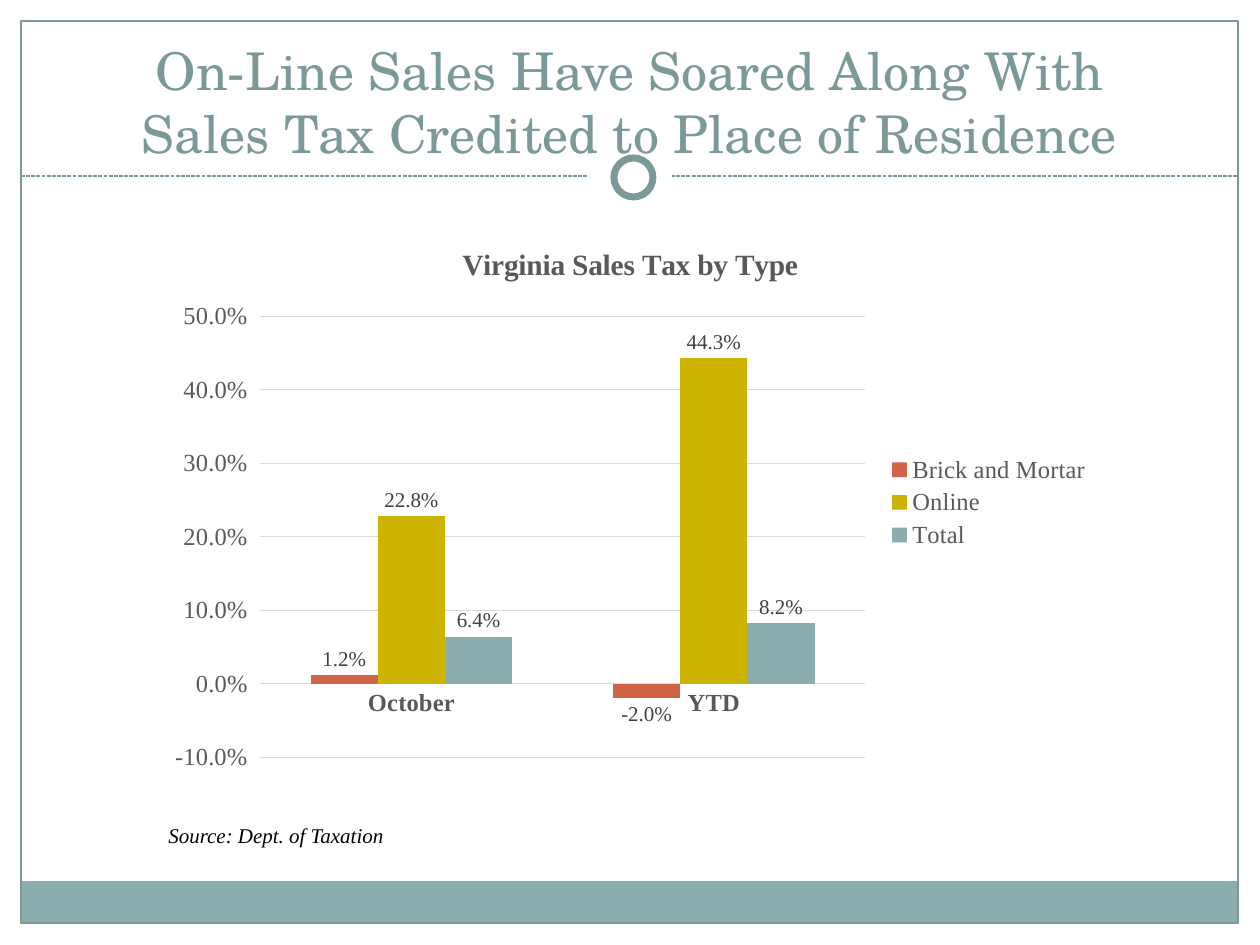
import pptx
import pptx.chart.data
import pptx.dml.color
import pptx.enum.chart
import pptx.enum.dml
import pptx.enum.shapes
import pptx.enum.text
import pptx.oxml
import pptx.oxml.ns
import pptx.util
from dataclasses import dataclass

PX = 914400 / 126


@dataclass(frozen=True)
class Theme:
    heading_font: str = "TeX Gyre Schola"
    body_font: str = "Times New Roman"
    white: str = "FFFFFF"
    black: str = "000000"
    frame: str = "7C999A"
    teal: str = "8CADAE"
    red: str = "D16349"
    gold: str = "CCB400"
    grid: str = "D9D9D9"
    chart_text: str = "595959"
    label_text: str = "404040"
    title_size: float = 29.7
    chart_title_size: float = 16.8
    chart_size: float = 14
    small_size: float = 12
    thin: float = 0.75


theme = Theme()


def box(*lengths):
    """Turn px lengths into EMU."""
    return [pptx.util.Emu(round(length * PX)) for length in lengths]


def style_font(font, name, size, color, bold=False, italic=False):
    font.name = name
    font.size = pptx.util.Pt(size)
    font.color.rgb = pptx.dml.color.RGBColor.from_string(color)
    font.bold = bold
    font.italic = italic


presentation = pptx.Presentation()
presentation.slide_width, presentation.slide_height = box(1260, 945)
slide = presentation.slides.add_slide(presentation.slide_layouts[5])

# Frame, footer band, dashed rule and ring
rectangle = pptx.enum.shapes.MSO_SHAPE.RECTANGLE
oval = pptx.enum.shapes.MSO_SHAPE.OVAL
rule = slide.shapes.add_connector(
    pptx.enum.shapes.MSO_CONNECTOR.STRAIGHT, *box(21, 176, 1239, 176))
rule.line.color.rgb = pptx.dml.color.RGBColor.from_string(theme.frame)
rule.line.width = pptx.util.Pt(theme.thin)
rule.line.dash_style = pptx.enum.dml.MSO_LINE.SQUARE_DOT
effects = pptx.oxml.ns.qn("a:effectLst")
rule.element.spPr.append(rule.element.makeelement(effects, {}))

for kind, bounds, fill, line_width in (
    (rectangle, (21, 881, 1217, 43), theme.teal, None),
    (rectangle, (21, 21, 1217, 902), None, theme.thin),
    (oval, (588, 132, 84, 84), theme.white, None),
    (oval, (614, 158, 39, 39), theme.white, 4),
):
    shape = slide.shapes.add_shape(kind, *box(*bounds))
    shape.shadow.inherit = False
    if fill:
        shape.fill.solid()
        shape.fill.fore_color.rgb = pptx.dml.color.RGBColor.from_string(fill)
    else:
        shape.fill.background()
    if line_width:
        shape.line.color.rgb = pptx.dml.color.RGBColor.from_string(theme.frame)
        shape.line.width = pptx.util.Pt(line_width)
    else:
        shape.line.fill.background()

# Title, brought in front of the ring
title = slide.shapes.title
title.left, title.top, title.width, title.height = box(42, 65, 1176, 105)
title.text_frame.text = (
    "On-Line Sales Have Soared Along With\vSales Tax Credited to Place of Residence")
title.text_frame.word_wrap = True
title.text_frame.auto_size = pptx.enum.text.MSO_AUTO_SIZE.NONE
title.text_frame.vertical_anchor = pptx.enum.text.MSO_ANCHOR.BOTTOM
paragraph = title.text_frame.paragraphs[0]
paragraph.alignment = pptx.enum.text.PP_ALIGN.CENTER
style_font(paragraph.font, theme.heading_font, theme.title_size, theme.frame)
title.element.getparent().append(title.element)

# Sales tax chart
chart_data = pptx.chart.data.CategoryChartData(number_format="0.0%")
chart_data.categories = ["October", "YTD"]
chart_data.add_series("Brick and Mortar", (0.012, -0.02))
chart_data.add_series("Online", (0.228, 0.443))
chart_data.add_series("Total", (0.064, 0.082))
chart = slide.shapes.add_chart(
    pptx.enum.chart.XL_CHART_TYPE.COLUMN_CLUSTERED,
    *box(156, 223, 948, 559), chart_data).chart
style_font(chart.font, theme.body_font, theme.chart_size, theme.black)

chart.has_title = True
chart.chart_title.include_in_layout = False
chart.chart_title.text_frame.text = "Virginia Sales Tax by Type"
style_font(chart.chart_title.text_frame.paragraphs[0].font, theme.body_font,
           theme.chart_title_size, theme.chart_text, bold=True)

chart.has_legend = True
chart.legend.position = pptx.enum.chart.XL_LEGEND_POSITION.RIGHT
chart.legend.include_in_layout = False
style_font(chart.legend.font, theme.body_font, theme.chart_size, theme.chart_text)

category_axis = chart.category_axis
category_axis.major_tick_mark = pptx.enum.chart.XL_TICK_MARK.NONE
style_font(category_axis.tick_labels.font, theme.body_font, theme.chart_size,
           theme.chart_text, bold=True)

value_axis = chart.value_axis
value_axis.minimum_scale = -0.1
value_axis.maximum_scale = 0.5
value_axis.major_unit = 0.1
value_axis.has_major_gridlines = True
value_axis.format.line.fill.background()
value_axis.tick_labels.number_format = "0.0%"
value_axis.tick_labels.number_format_is_linked = False
style_font(value_axis.tick_labels.font, theme.body_font, theme.chart_size,
           theme.chart_text)

for line in (category_axis.format.line, value_axis.major_gridlines.format.line):
    line.color.rgb = pptx.dml.color.RGBColor.from_string(theme.grid)
    line.width = pptx.util.Pt(theme.thin)

plot = chart.plots[0]
plot.gap_width = 150
plot.overlap = 0
plot.vary_by_categories = False
for series, color in zip(plot.series, (theme.red, theme.gold, theme.teal)):
    series.invert_if_negative = False
    series.format.fill.solid()
    series.format.fill.fore_color.rgb = pptx.dml.color.RGBColor.from_string(color)
    labels = series.data_labels
    labels.show_value = True
    labels.position = pptx.enum.chart.XL_LABEL_POSITION.OUTSIDE_END
    labels.number_format = "0.0%"
    labels.number_format_is_linked = False
    style_font(labels.font, theme.body_font, theme.small_size, theme.label_text)

# Fixed plot area, as fractions of the chart
plot_area = chart.element.find(".//" + pptx.oxml.ns.qn("c:plotArea"))
for layout in plot_area.findall(pptx.oxml.ns.qn("c:layout")):
    plot_area.remove(layout)
plot_area.insert(0, pptx.oxml.parse_xml(
    f'<c:layout {pptx.oxml.ns.nsdecls("c")}><c:manualLayout>'
    '<c:layoutTarget val="inner"/><c:xMode val="edge"/><c:yMode val="edge"/>'
    '<c:x val="0.11"/><c:y val="0.167"/><c:w val="0.638"/><c:h val="0.789"/>'
    '</c:manualLayout></c:layout>'))

# Source note
source = slide.shapes.add_textbox(*box(156, 816, 630, 38))
source.text_frame.word_wrap = True
source.text_frame.text = "Source: Dept. of Taxation"
style_font(source.text_frame.paragraphs[0].font, theme.body_font,
           theme.small_size, theme.black, italic=True)

presentation.save("out.pptx")
